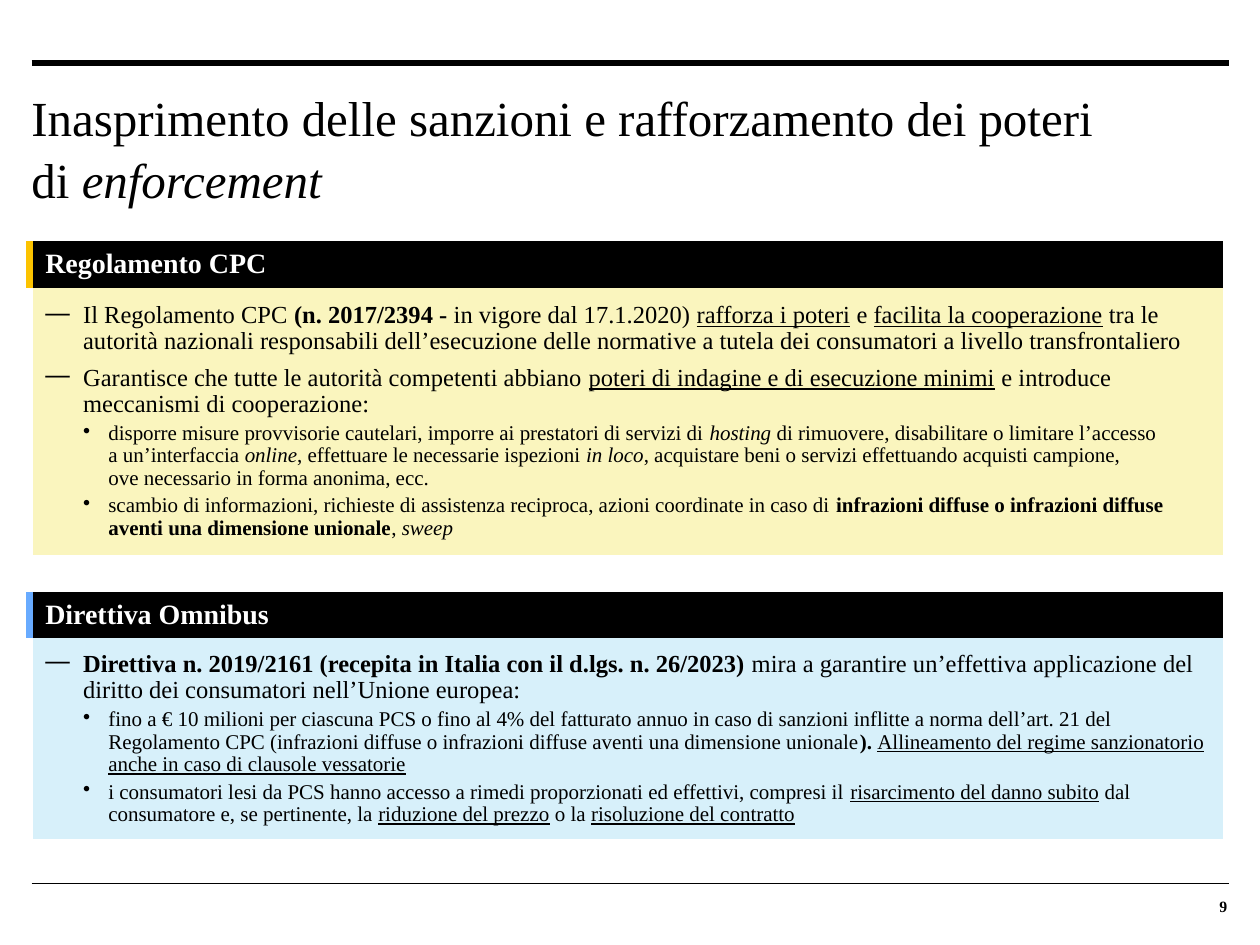
from lxml.etree import SubElement
from pptx import Presentation
from pptx.dml.color import RGBColor
from pptx.enum.shapes import MSO_CONNECTOR as CONN
from pptx.enum.text import MSO_ANCHOR as ANCHOR, PP_ALIGN as ALIGN
from pptx.oxml.ns import qn
from pptx.util import Pt

FONT = "Times New Roman"
NO_GRID = "{2D5ABB26-0587-4C30-8999-92F81FD0307C}"
BLACK, WHITE = "000000", "FFFFFF"
STYLES = {"b": "bold", "i": "italic", "u": "underline"}
# level: bullet, text indent, hanging indent, font size
LEVELS = {1: ("—", 21.6, 21.6, 14), 2: ("•", 36, 14.4, 12)}


def rgb(color):
    return RGBColor.from_string(color)


class SlideBuilder:
    def __init__(self, prs):
        self.s = prs.slides.add_slide(prs.slide_layouts[6])

    def runs(self, p, parts, size, color=BLACK):
        """Add (text, style letters) parts; a newline is a line break."""
        for text, style in parts:
            for n, piece in enumerate(text.split("\n")):
                if n:
                    p.add_line_break()
                r = p.add_run()
                r.text = piece
                fmt = {"name": FONT, "size": Pt(size)}
                fmt.update({STYLES[letter]: True for letter in style})
                for name, value in fmt.items():
                    setattr(r.font, name, value)
                r.font.color.rgb = rgb(color)

    def text(self, box, parts, size, anchor=ANCHOR.TOP, **fmt):
        tf = self.s.shapes.add_textbox(*map(Pt, box)).text_frame
        tf.word_wrap = True
        tf.vertical_anchor = anchor
        for side in ("left", "top", "right", "bottom"):
            setattr(tf, f"margin_{side}", 0)
        p = tf.paragraphs[0]
        for name, value in fmt.items():
            setattr(p, name, value)
        self.runs(p, parts, size)

    def rule(self, y, width):
        line = self.s.shapes.add_connector(
            CONN.STRAIGHT, Pt(18), Pt(y), Pt(702), Pt(y))
        line.line.color.rgb = rgb(BLACK)
        line.line.width = Pt(width)
        SubElement(line._element.spPr, qn("a:effectLst"))

    def bullet(self, p, level, after, parts):
        char, left, hang, size = LEVELS[level]
        pPr = p._p.get_or_add_pPr()
        pPr.set("marL", str(Pt(left)))
        pPr.set("indent", str(-Pt(hang)))
        SubElement(pPr, qn("a:buChar")).set("char", char)
        p.line_spacing = 0.96
        p.space_after = Pt(after)
        self.runs(p, parts, size)

    def panel(self, top, body_height, accent, fill, heading, items):
        """Table with an accent bar, a black heading and a bulleted body."""
        heights, widths = (25.2, body_height), (3.6, 680.4)
        frame = self.s.shapes.add_table(
            2, 2, Pt(15.1), Pt(top), Pt(sum(widths)), Pt(sum(heights)))
        table = frame.table
        table._tbl.tblPr.find(qn("a:tableStyleId")).text = NO_GRID
        for row, height in zip(table.rows, heights):
            row.height = Pt(height)
        for column, width in zip(table.columns, widths):
            column.width = Pt(width)
        for row in (0, 1):
            bar = table.cell(row, 0)
            for side in ("left", "top", "right", "bottom"):
                setattr(bar, f"margin_{side}", 0)
        head, body = table.cell(0, 1), table.cell(1, 1)
        for cell, color in ((table.cell(0, 0), accent), (head, BLACK), (body, fill)):
            cell.fill.solid()
            cell.fill.fore_color.rgb = rgb(color)
            cell.vertical_anchor = ANCHOR.MIDDLE
        table.cell(1, 0).fill.background()
        self.runs(head.text_frame.paragraphs[0], [(heading, "b")], 16, WHITE)
        tf = body.text_frame
        for n, item in enumerate(items):
            self.bullet(tf.add_paragraph() if n else tf.paragraphs[0], *item)


REGULATION = [
    (1, 6, [
        ("Il Regolamento CPC ", ""), ("(n. 2017/2394 -", "b"),
        (" in vigore dal 17.1.2020) ", ""), ("rafforza i poteri", "u"),
        (" e ", ""), ("facilita la cooperazione", "u"),
        (" tra le autorità nazionali responsabili dell’esecuzione delle "
         "normative a tutela dei consumatori a livello transfrontaliero", "")]),
    (1, 3, [
        ("Garantisce che tutte le autorità competenti abbiano ", ""),
        ("poteri di indagine e di esecuzione minimi", "u"),
        (" e introduce meccanismi di cooperazione:", "")]),
    (2, 3, [
        ("disporre misure provvisorie cautelari, imporre ai prestatori di "
         "servizi di ", ""), ("hosting ", "i"),
        ("di rimuovere, disabilitare o limitare l’accesso \n"
         "a un’interfaccia ", ""), ("online", "i"),
        (", effettuare le necessarie ispezioni ", ""), ("in loco", "i"),
        (", acquistare beni o servizi effettuando acquisti campione, \n"
         "ove necessario in forma anonima, ecc.", "")]),
    (2, 3, [
        ("scambio di informazioni, richieste di assistenza reciproca, azioni "
         "coordinate in caso di ", ""),
        ("infrazioni diffuse o infrazioni diffuse aventi una dimensione "
         "unionale", "b"), (", ", ""), ("sweep", "i")]),
]
DIRECTIVE = [
    (1, 3, [
        ("Direttiva n. 2019/2161 (recepita in Italia con il d.lgs. "
         "n. 26/2023) ", "b"),
        ("mira a garantire un’effettiva applicazione del diritto dei "
         "consumatori nell’Unione europea:", "")]),
    (2, 3, [
        ("fino a € 10 milioni per ciascuna PCS o fino al 4% del fatturato "
         "annuo in caso di sanzioni inflitte a norma dell’art. 21 del "
         "Regolamento CPC (infrazioni diffuse o infrazioni diffuse aventi "
         "una dimensione unionale", ""), ("). ", "b"),
        ("Allineamento del regime sanzionatorio anche in caso di clausole "
         "vessatorie", "u")]),
    (2, 3, [
        ("i consumatori lesi da PCS hanno accesso a rimedi proporzionati ed "
         "effettivi, compresi il ", ""), ("risarcimento del danno subito", "u"),
        (" dal consumatore e, se pertinente, la ", ""),
        ("riduzione del prezzo", "u"), (" o la ", ""),
        ("risoluzione del contratto", "u")]),
]


def main():
    prs = Presentation()
    prs.slide_width, prs.slide_height = Pt(720), Pt(540)
    b = SlideBuilder(prs)
    b.text((653.8, 506.9, 47.5, 16.6), [("9", "b")], 9, ANCHOR.BOTTOM,
           alignment=ALIGN.RIGHT)
    b.rule(36, 3)
    b.rule(504.7, 0.5)
    b.text((18, 48.2, 684, 71.3),
           [("Inasprimento delle sanzioni e rafforzamento dei poteri \ndi ", ""),
            ("enforcement", "i")], 28, line_spacing=1.05)
    b.panel(338.4, 110.8, "68ABFF", "D7F0FA", "Direttiva Omnibus", DIRECTIVE)
    b.panel(137.9, 148, "FCC300", "FAF5BE", "Regolamento CPC", REGULATION)
    prs.save("out.pptx")


if __name__ == "__main__":
    main()
